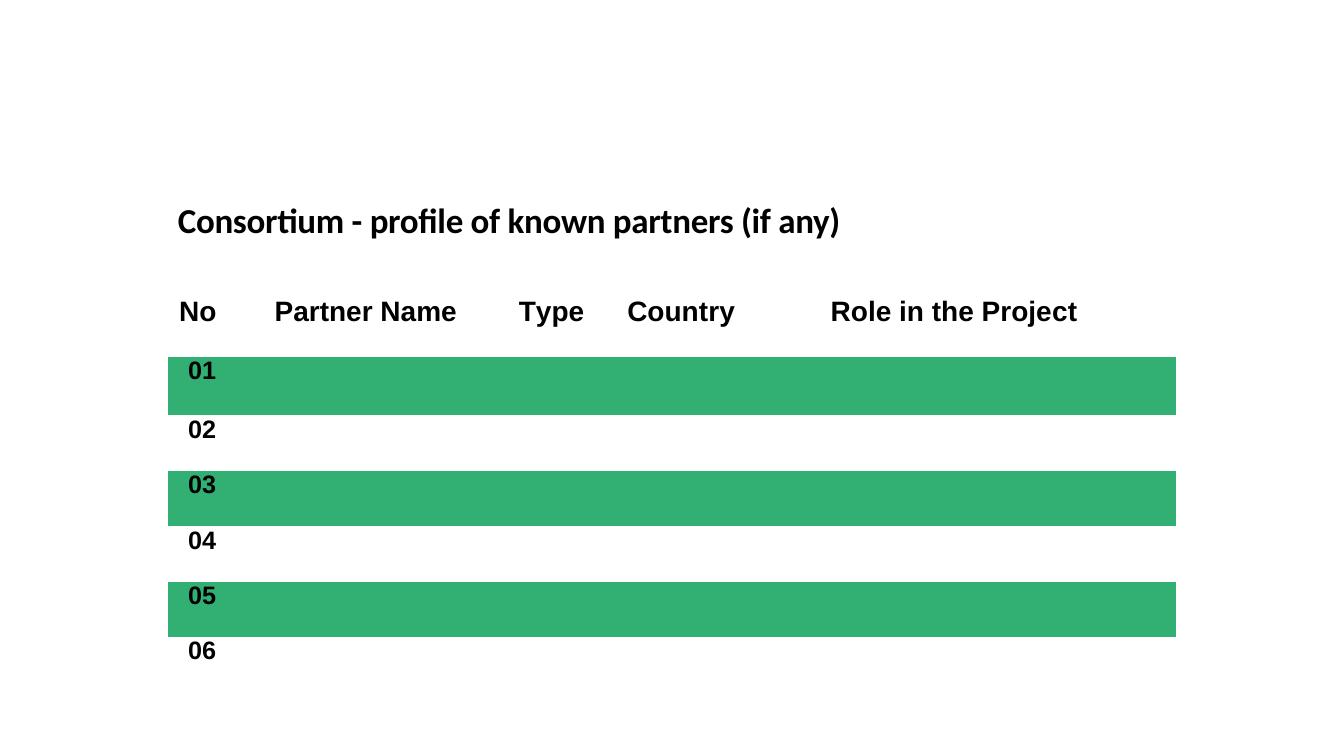
from dataclasses import dataclass

import pptx
import pptx.dml.color
import pptx.enum.text
import pptx.util

Pt = pptx.util.Pt
BLACK = "000000"
GREEN = "32AF73"
PLAIN_TABLE = "{2D5ABB26-0587-4C30-8999-92F81FD0307C}"
LEFT = 120
TABLE_TOP = 190
TABLE_WIDTH = 720
COLUMN_WIDTHS = [55.3, 171.5, 91.2, 115, 287]
ROW_HEIGHTS = [21.6, 43.2, 41.8] + [39.6] * 5


@dataclass
class Span:
    text: str
    spacing: float = 0


@dataclass
class Entry:
    spans: list[Span]
    indent: float
    size: float


HEADERS = [
    Entry([Span("No", 0.1)], 7.9, 20),
    Entry([Span("Partner Name")], 20.9, 20),
    Entry([Span("T", -1.4), Span("y", -0.3), Span("pe")], 23.8, 20),
    Entry([Span("Coun"), Span("t", 0.1), Span("ry")], 10.1, 20),
    Entry([Span("R", 0.1), Span("ole in the Proje"), Span("c", 0.1), Span("t")], 40.3, 20),
]
NUMBERS = [Entry([Span(f"{n:02}", -0.1)], 14.4, 18) for n in range(1, 7)]


def rgb(value: str) -> pptx.dml.color.RGBColor:
    return pptx.dml.color.RGBColor.from_string(value)


def write(tf, entry: Entry, font_name: str) -> None:
    p = tf.paragraphs[0]
    if entry.indent:
        pPr = p._p.get_or_add_pPr()
        pPr.set("marL", str(Pt(entry.indent)))
        pPr.set("indent", "0")
    for span in entry.spans:
        r = p.add_run()
        r.text = span.text
        r._r.get_or_add_rPr().set("spc", str(round(span.spacing * 100)))
    p.font.name = font_name
    p.font.size = Pt(entry.size)
    p.font.bold = True
    p.font.color.rgb = rgb(BLACK)


def add_title(s) -> None:
    sp = s.shapes.add_textbox(Pt(LEFT), Pt(134), Pt(518), Pt(41.8))
    tf = sp.text_frame
    tf.word_wrap = True
    tf.vertical_anchor = pptx.enum.text.MSO_ANCHOR.BOTTOM
    title = Span("Consortium - profile of known partners (if any)", -0.2)
    write(tf, Entry([title], 0, 25), "Calibri")
    tf.paragraphs[0].line_spacing = 0.9


def add_partner_table(s) -> None:
    frame = s.shapes.add_table(
        len(ROW_HEIGHTS), len(COLUMN_WIDTHS),
        Pt(LEFT), Pt(TABLE_TOP), Pt(TABLE_WIDTH), Pt(sum(ROW_HEIGHTS)),
    )
    table = frame.table
    table.first_row = table.horz_banding = False
    table._tbl.tblPr[0].text = PLAIN_TABLE
    for column, width in zip(table.columns, COLUMN_WIDTHS):
        column.width = Pt(width)
    for i, (row, height) in enumerate(zip(table.rows, ROW_HEIGHTS)):
        row.height = Pt(height)
        for cell in row.cells:
            cell.margin_left = cell.margin_right = 0
            cell.margin_top = cell.margin_bottom = 0
            if i >= 2 and i % 2 == 0:
                cell.fill.solid()
                cell.fill.fore_color.rgb = rgb(GREEN)
            else:
                cell.fill.background()
    for column, header in enumerate(HEADERS):
        write(table.cell(1, column).text_frame, header, "Arial")
    for i, number in enumerate(NUMBERS, start=2):
        write(table.cell(i, 0).text_frame, number, "Arial")
        if i >= 5:
            table.cell(i, 0).merge(table.cell(i, len(COLUMN_WIDTHS) - 1))


def main() -> None:
    prs = pptx.Presentation()
    prs.slide_width = Pt(960)
    prs.slide_height = Pt(540)
    s = prs.slides.add_slide(prs.slide_layouts[6])
    add_title(s)
    add_partner_table(s)
    prs.save("out.pptx")


if __name__ == "__main__":
    main()
